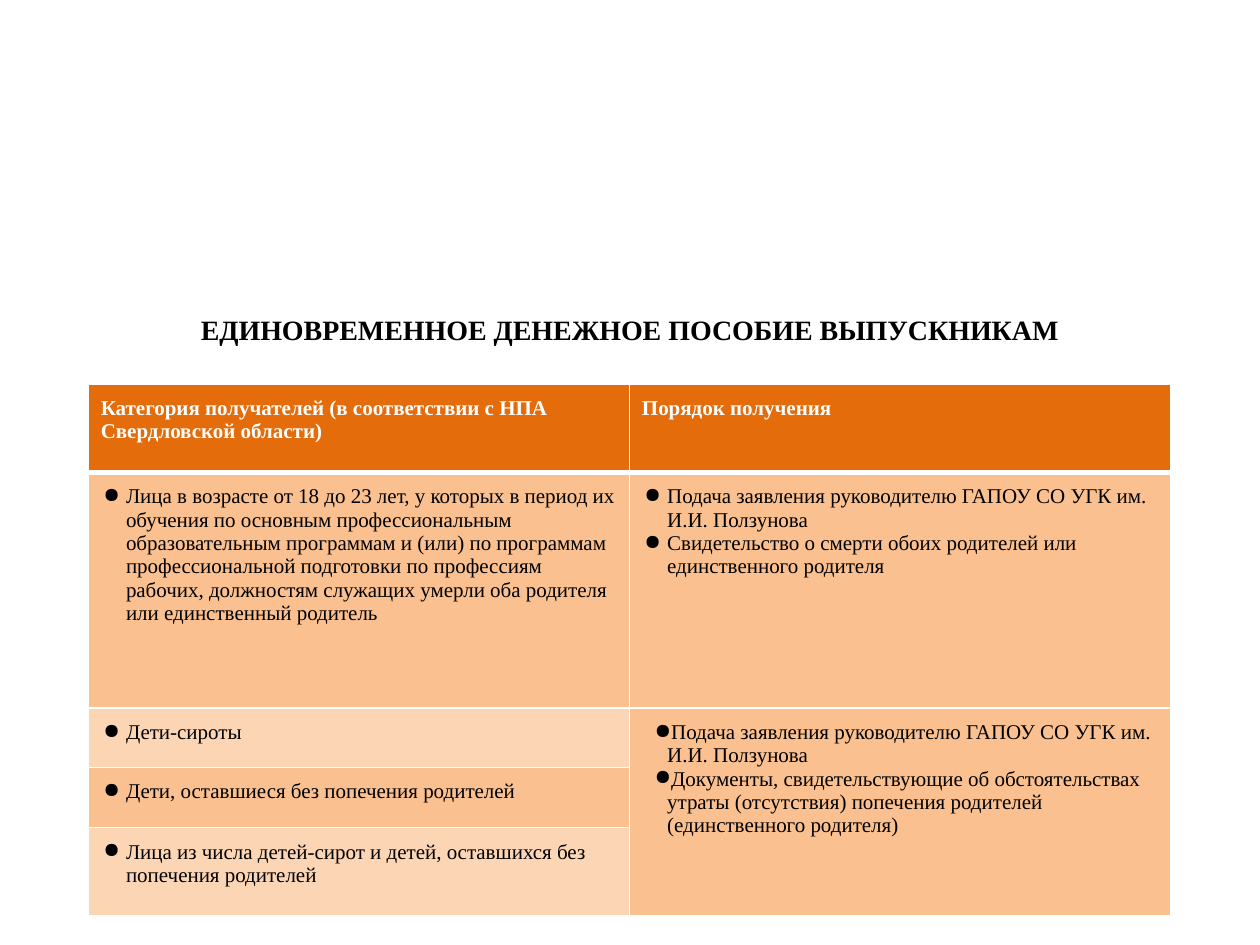
from lxml import etree
from pptx import Presentation
from pptx.dml.color import RGBColor
from pptx.enum.text import MSO_ANCHOR, PP_ALIGN
from pptx.oxml.ns import qn
from pptx.util import Inches, Pt

CENTER = PP_ALIGN.CENTER
LEFT = PP_ALIGN.LEFT
TOP = MSO_ANCHOR.TOP
MIDDLE = MSO_ANCHOR.MIDDLE

FONT = "Times New Roman"
COLORS = {
    "text": "000000",
    "white": "FFFFFF",
    "header": "E46C0A",
    "dark": "FAC090",
    "light": "FCD5B5",
}
HEADINGS = [
    "Категория получателей (в соответствии с НПА Свердловской области)",
    "Порядок получения",
]
CATEGORIES = [
    "Лица в возрасте от 18 до 23 лет, у которых в период их обучения по "
    "основным профессиональным образовательным программам и (или) по "
    "программам профессиональной подготовки по профессиям рабочих, "
    "должностям служащих умерли оба родителя или единственный родитель",
    "Дети-сироты",
    "Дети, оставшиеся без попечения родителей",
    "Лица из числа детей-сирот и детей, оставшихся без попечения родителей",
]
APPLICATION = "Подача заявления руководителю ГАПОУ СО УГК им. И.И. Ползунова"
DEATH_PROOF = [
    APPLICATION,
    "Свидетельство о смерти обоих родителей или единственного родителя",
]
CARE_LOSS_PROOF = [
    APPLICATION,
    "Документы, свидетельствующие об обстоятельствах утраты (отсутствия) "
    "попечения родителей (единственного родителя)",
]
ROW_HEIGHTS = [0.7, 1.87, 0.47, 0.48, 0.7]


class SlideBuilder:
    """Holds the slide and its common style."""

    def __init__(self, prs):
        self.slide = prs.slides.add_slide(prs.slide_layouts[5])

    def style(self, p, size, color, bold=False, align=LEFT):
        p.alignment = align
        p.font.name = FONT
        p.font.size = Pt(size)
        p.font.bold = bold
        p.font.color.rgb = RGBColor.from_string(COLORS[color])

    def title(self, text, left, top, width, height):
        sp = self.slide.shapes.title
        sp.left, sp.top = Inches(left), Inches(top)
        sp.width, sp.height = Inches(width), Inches(height)
        tf = sp.text_frame
        tf.text = text
        tf.vertical_anchor = MIDDLE
        self.style(tf.paragraphs[0], 16, "text", True, CENTER)

    def table(self, left, top, width, row_heights, cols):
        frame = self.slide.shapes.add_table(
            len(row_heights), cols, Inches(left), Inches(top),
            Inches(width), Inches(sum(row_heights)))
        table = frame.table
        table.first_row = table.horz_banding = False
        for row, height in zip(table.rows, row_heights):
            row.height = Inches(height)
        return table

    def borders(self, cell, top=1, bottom=1):
        tc_pr = cell._tc.get_or_add_tcPr()
        for side, points in (("L", 1), ("R", 1), ("T", top), ("B", bottom)):
            ln = etree.SubElement(tc_pr, qn(f"a:ln{side}"), w=str(Pt(points)))
            fill = etree.SubElement(ln, qn("a:solidFill"))
            etree.SubElement(fill, qn("a:srgbClr"), val=COLORS["white"])

    def bullet(self, p, margin):
        p_pr = p._p.get_or_add_pPr()
        p_pr.set("marL", str(Inches(margin)))
        p_pr.set("indent", str(Inches(-0.18)))
        etree.SubElement(p_pr, qn("a:buChar"), char="●")

    def cell(self, cell, lines, fill, color="text", bold=False,
             bullet_margin=None, inset=0.1):
        cell.margin_left = Inches(inset)
        cell.margin_right = cell.margin_top = cell.margin_bottom = Inches(0.1)
        cell.vertical_anchor = TOP
        cell.fill.solid()
        cell.fill.fore_color.rgb = RGBColor.from_string(COLORS[fill])
        tf = cell.text_frame
        tf.text = "\n".join(lines)
        for p in tf.paragraphs:
            if bullet_margin is not None:
                self.bullet(p, bullet_margin)
            self.style(p, 12, color, bold)


def main():
    prs = Presentation()
    prs.slide_width, prs.slide_height = Inches(10), Inches(7.5)
    s = SlideBuilder(prs)
    s.title("ЕДИНОВРЕМЕННОЕ ДЕНЕЖНОЕ ПОСОБИЕ ВЫПУСКНИКАМ",
            0.75, 2.33, 8.5, 0.56)

    table = s.table(0.7, 3.05, 8.59, ROW_HEIGHTS, len(HEADINGS))
    table.cell(2, 1).merge(table.cell(4, 1))
    for i, row in enumerate(table.rows):
        for cell in row.cells:
            s.borders(cell, top=3 if i == 1 else 1, bottom=3 if i == 0 else 1)

    for col, heading in enumerate(HEADINGS):
        s.cell(table.cell(0, col), [heading], "header", "white", bold=True)
    for row, category in enumerate(CATEGORIES, start=1):
        fill = "dark" if row % 2 else "light"
        s.cell(table.cell(row, 0), [category], fill, bullet_margin=0.2)
    s.cell(table.cell(1, 1), DEATH_PROOF, "dark", bullet_margin=0.2)
    s.cell(table.cell(2, 1), CARE_LOSS_PROOF, "dark",
           bullet_margin=0.1, inset=0.2)

    prs.save("out.pptx")


if __name__ == "__main__":
    main()
